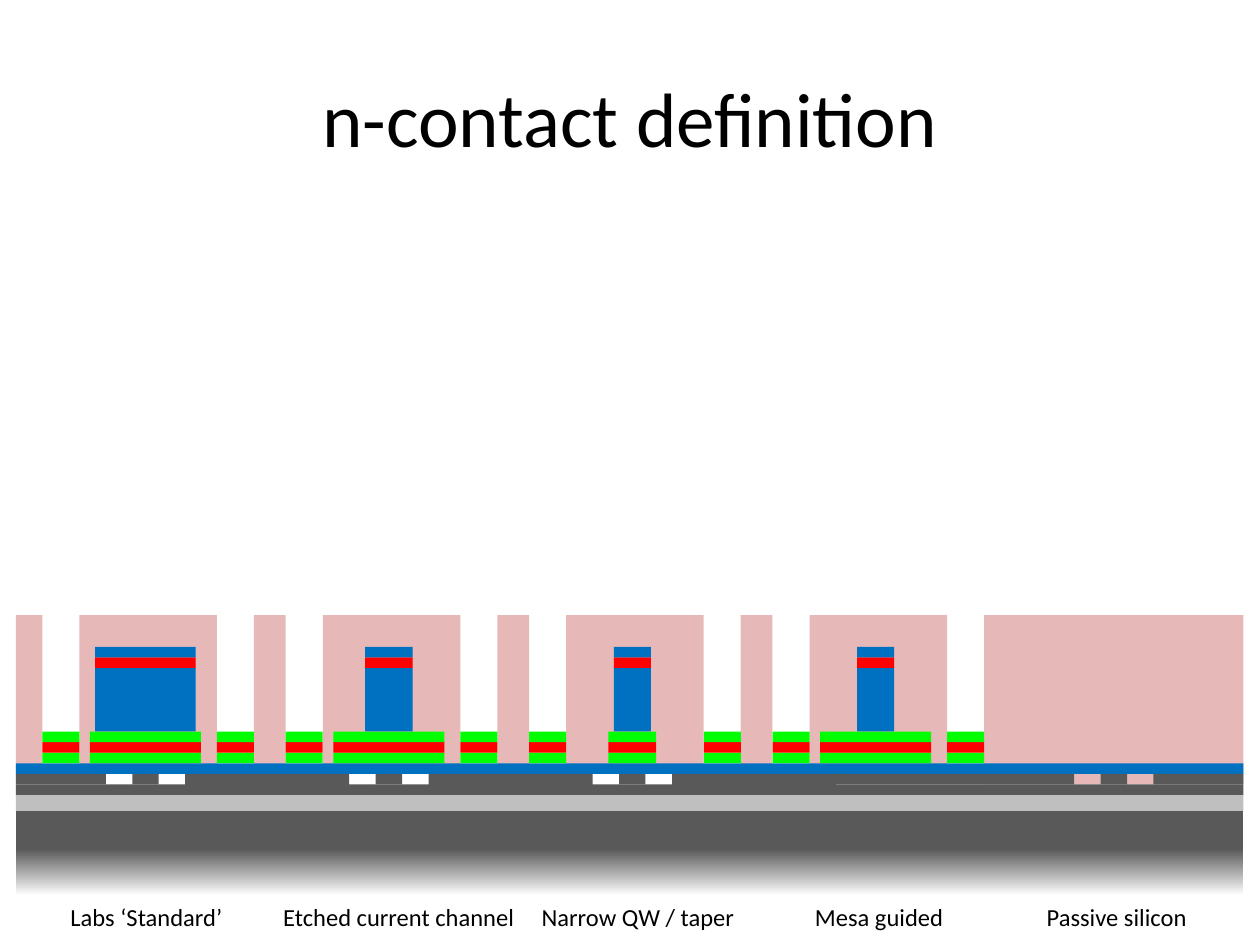
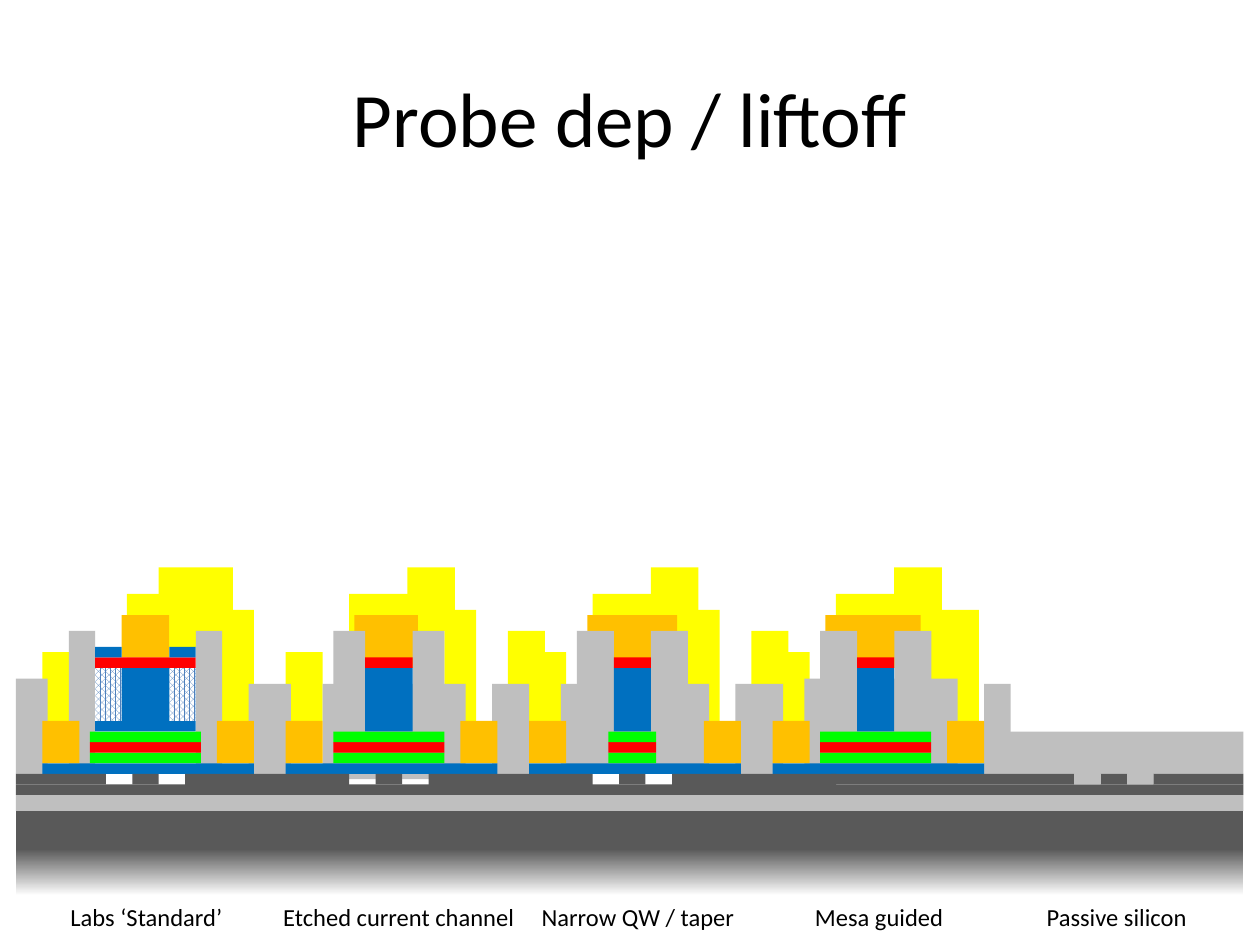
from dataclasses import dataclass
from typing import NamedTuple

from pptx import Presentation
from pptx.dml.color import RGBColor
from pptx.enum.dml import MSO_PATTERN
from pptx.enum.shapes import MSO_SHAPE
from pptx.enum.text import MSO_ANCHOR, MSO_AUTO_SIZE, PP_ALIGN
from pptx.util import Cm, Pt

COLORS = {
    "text": "000000",
    "paper": "FFFFFF",
    "silicon": "595959",
    "oxide": "BFBFBF",
    "n_layer": "0070C0",
    "cladding": "00FF00",
    "active": "FF0000",
    "resist": "E6B9B8",
    "probe": "FFFF00",
    "metal": "FFC000",
    "implant": "4F81BD",
}
FONT = "Calibri"
UNIT = Cm(0.32) / 3
SURFACE = Cm(15.6)
WAFER_LEFT, WAFER_WIDTH = 3, 232
FIRST_MESA, PITCH = 8, 46
MESA_WIDTH, CONTACT_WIDTH = 40, 7
CONTACT_OFFSETS = (0, MESA_WIDTH - CONTACT_WIDTH)
PASSIVE_LEFT, PASSIVE_WIDTH = 186, 49
PASSIVE_TRENCHES = (203, 213)
TRENCH_WIDTH = 5


class Block(NamedTuple):
    left: float
    rise: float
    width: float
    height: float
    color: str


class Label(NamedTuple):
    text: str
    left: float
    width: float


@dataclass(frozen=True)
class Device:
    index: int
    stack_left: int
    stack_width: int
    pillar_left: int
    pillar_width: int
    sidewall: int
    skirt: Block
    cap: Block
    probes: tuple[Block, ...]

    @property
    def origin(self) -> int:
        return FIRST_MESA + PITCH * self.index

    @property
    def pillar_right(self) -> int:
        return self.pillar_left + self.pillar_width


def ridge_probes(arm_width: int) -> tuple[Block, ...]:
    return (
        Block(12, 34, 15, 12, "probe"),
        Block(30, 31, arm_width, 21, "probe"),
        Block(23, 39, 9, 12, "probe"),
    )


DEVICES = (
    Device(0, 9, 21, 10, 19, 5, Block(39, 17, 8, 17, "oxide"),
           Block(15, 30, 9, 8, "metal"),
           (Block(16, 34, 8, 12, "probe"), Block(34, 31, 6, 21, "probe"),
            Block(22, 39, 14, 15, "probe"))),
    Device(1, 9, 21, 15, 9, 6, Block(7, 17, 27, 18, "oxide"),
           Block(13, 30, 12, 10, "metal"), ridge_probes(6)),
    Device(2, 15, 9, 16, 7, 7, Block(6, 17, 28, 17, "oxide"),
           Block(11, 30, 17, 10, "metal"), ridge_probes(6)),
    Device(3, 9, 21, 16, 7, 7, Block(6, 18, 29, 17, "oxide"),
           Block(10, 30, 18, 10, "metal"), ridge_probes(9)),
)
LABELS = (
    Label("Labs ‘Standard’", 1.17, 3.78),
    Label("Etched current channel", 5.46, 5.21),
    Label("Narrow QW / taper", 10.67, 4.42),
    Label("Mesa guided", 16.18, 3.12),
    Label("Passive silicon", 20.85, 3.35),
)


def hex_color(name: str) -> RGBColor:
    return RGBColor.from_string(COLORS[name])


def draw_block(page, block: Block, origin: float = 0):
    shape = page.shapes.add_shape(
        MSO_SHAPE.RECTANGLE,
        round((origin + block.left) * UNIT),
        round(SURFACE - block.rise * UNIT),
        round(block.width * UNIT),
        round(block.height * UNIT),
    )
    shape.shadow.inherit = False
    shape.line.fill.background()
    shape.fill.solid()
    shape.fill.fore_color.rgb = hex_color(block.color)
    return shape


def draw_text(page, text: str, left: float, top: float, width: float,
              height: float, size: int):
    box = page.shapes.add_textbox(Cm(left), Cm(top), Cm(width), Cm(height))
    para = box.text_frame.paragraphs[0]
    span = para.add_run()
    span.text = text
    span.font.name = FONT
    span.font.size = Pt(size)
    span.font.color.rgb = hex_color("text")
    return box


def draw_title(page, text: str) -> None:
    frame = draw_text(page, text, 1.27, 0.76, 22.86, 3.18, 44).text_frame
    frame.word_wrap = True
    frame.vertical_anchor = MSO_ANCHOR.MIDDLE
    frame.paragraphs[0].alignment = PP_ALIGN.CENTER


def draw_labels(page) -> None:
    for label in LABELS:
        frame = draw_text(page, label.text, label.left, 18.06,
                          label.width, 0.86, 14).text_frame
        frame.word_wrap = False
        frame.auto_size = MSO_AUTO_SIZE.SHAPE_TO_FIT_TEXT


def draw_substrate(page) -> None:
    handle = draw_block(page, Block(WAFER_LEFT, -7, WAFER_WIDTH, 16, "silicon"))
    handle.fill.gradient()
    handle.fill.gradient_angle = 270
    for stop, position, name in zip(handle.fill.gradient_stops, (0.45, 1),
                                    ("silicon", "paper")):
        stop.position = position
        stop.color.rgb = hex_color(name)


def draw_silicon(page) -> None:
    draw_block(page, Block(WAFER_LEFT, -4, WAFER_WIDTH, 3, "oxide"))
    draw_block(page, Block(WAFER_LEFT, -2, WAFER_WIDTH, 2, "silicon"))
    for left, width in ((WAFER_LEFT, 17), (157, 46), (208, 5), (218, 17)):
        draw_block(page, Block(left, 0, width, 2, "silicon"))
    for device in DEVICES[:3]:
        draw_block(page, Block(17, 0, 5, 2, "silicon"), device.origin)
        draw_block(page, Block(27, 0, 31, 3, "silicon"), device.origin)


def draw_active_stack(page, origin: int, left: int, width: int) -> None:
    for rise, color in ((4, "cladding"), (6, "active"), (8, "cladding")):
        draw_block(page, Block(left, rise, width, 2, color), origin)


def draw_ridges(page) -> None:
    for device in DEVICES:
        draw_active_stack(page, device.origin, device.stack_left,
                          device.stack_width)
        for rise, height, color in ((20, 12, "n_layer"), (22, 2, "active")):
            draw_block(page, Block(device.pillar_left, rise,
                                   device.pillar_width, height, color),
                       device.origin)


def draw_resist(page) -> None:
    draw_block(page, Block(WAFER_LEFT, 30, 5, 30, "resist"))
    for device in DEVICES:
        draw_block(page, Block(7, 30, 26, 30, "resist"), device.origin)
    for device in DEVICES[:-1]:
        draw_block(page, Block(40, 30, 6, 30, "resist"), device.origin)
    draw_block(page, Block(PASSIVE_LEFT, 30, PASSIVE_WIDTH, 32, "resist"))


def draw_probe_metal(page) -> None:
    for device in DEVICES:
        draw_block(page, Block(0, 23, CONTACT_WIDTH, 13, "probe"), device.origin)
        for probe in device.probes:
            draw_block(page, probe, device.origin)
    for device in DEVICES[1:3]:
        draw_block(page, Block(42, 27, 7, 11, "probe"), device.origin)
    for device in DEVICES:
        draw_block(page, device.cap, device.origin)


def draw_passivation(page) -> None:
    for device in DEVICES:
        draw_block(page, device.skirt, device.origin)
        for left in (device.pillar_left - device.sidewall, device.pillar_right):
            draw_block(page, Block(left, 27, device.sidewall, 27, "oxide"),
                       device.origin)
    for device, width in zip(DEVICES[1:3], (7, 9)):
        draw_block(page, Block(39, 17, width, 17, "oxide"), device.origin)
    draw_block(page, Block(WAFER_LEFT, 18, 6, 18, "oxide"))
    draw_block(page, Block(PASSIVE_LEFT, 8, PASSIVE_WIDTH, 8, "oxide"))
    draw_block(page, Block(PASSIVE_LEFT, 17, 5, 17, "oxide"))


def draw_implants(page) -> None:
    standard = DEVICES[0]
    for left in (standard.pillar_left, standard.pillar_right - 5):
        draw_block(page, Block(left, 24, 5, 2, "n_layer"), standard.origin)
        implant = draw_block(page, Block(left, 20, 5, 10, "implant"),
                             standard.origin)
        implant.fill.patterned()
        implant.fill.pattern = MSO_PATTERN.PERCENT_75
        implant.fill.fore_color.rgb = hex_color("implant")
        implant.fill.back_color.rgb = hex_color("paper")


def draw_frame(page, title: str) -> None:
    draw_title(page, title)
    draw_substrate(page)
    draw_labels(page)


def build_contact_definition(page) -> None:
    draw_resist(page)
    draw_frame(page, "n-contact definition")
    draw_block(page, Block(WAFER_LEFT, 2, WAFER_WIDTH, 2, "n_layer"))
    draw_silicon(page)
    draw_ridges(page)
    for device in DEVICES:
        for left in CONTACT_OFFSETS:
            draw_active_stack(page, device.origin, left, CONTACT_WIDTH)
        draw_block(page, Block(device.pillar_left, 24, device.pillar_width, 2,
                               "n_layer"), device.origin)


def build_probe_liftoff(page) -> None:
    draw_probe_metal(page)
    draw_passivation(page)
    draw_frame(page, "Probe dep / liftoff")
    for device in DEVICES:
        draw_block(page, Block(0, 2, MESA_WIDTH, 2, "n_layer"), device.origin)
    draw_silicon(page)
    draw_ridges(page)
    for device in DEVICES:
        for left in CONTACT_OFFSETS:
            draw_block(page, Block(left, 10, CONTACT_WIDTH, 8, "metal"),
                       device.origin)
    for left in PASSIVE_TRENCHES:
        draw_block(page, Block(left, 0, TRENCH_WIDTH, 2, "oxide"))
    draw_implants(page)


def main() -> None:
    deck = Presentation()
    deck.slide_width = Cm(25.4)
    deck.slide_height = Cm(19.05)
    for build in (build_contact_definition, build_probe_liftoff):
        build(deck.slides.add_slide(deck.slide_layouts[6]))
    deck.save("out.pptx")


if __name__ == "__main__":
    main()
